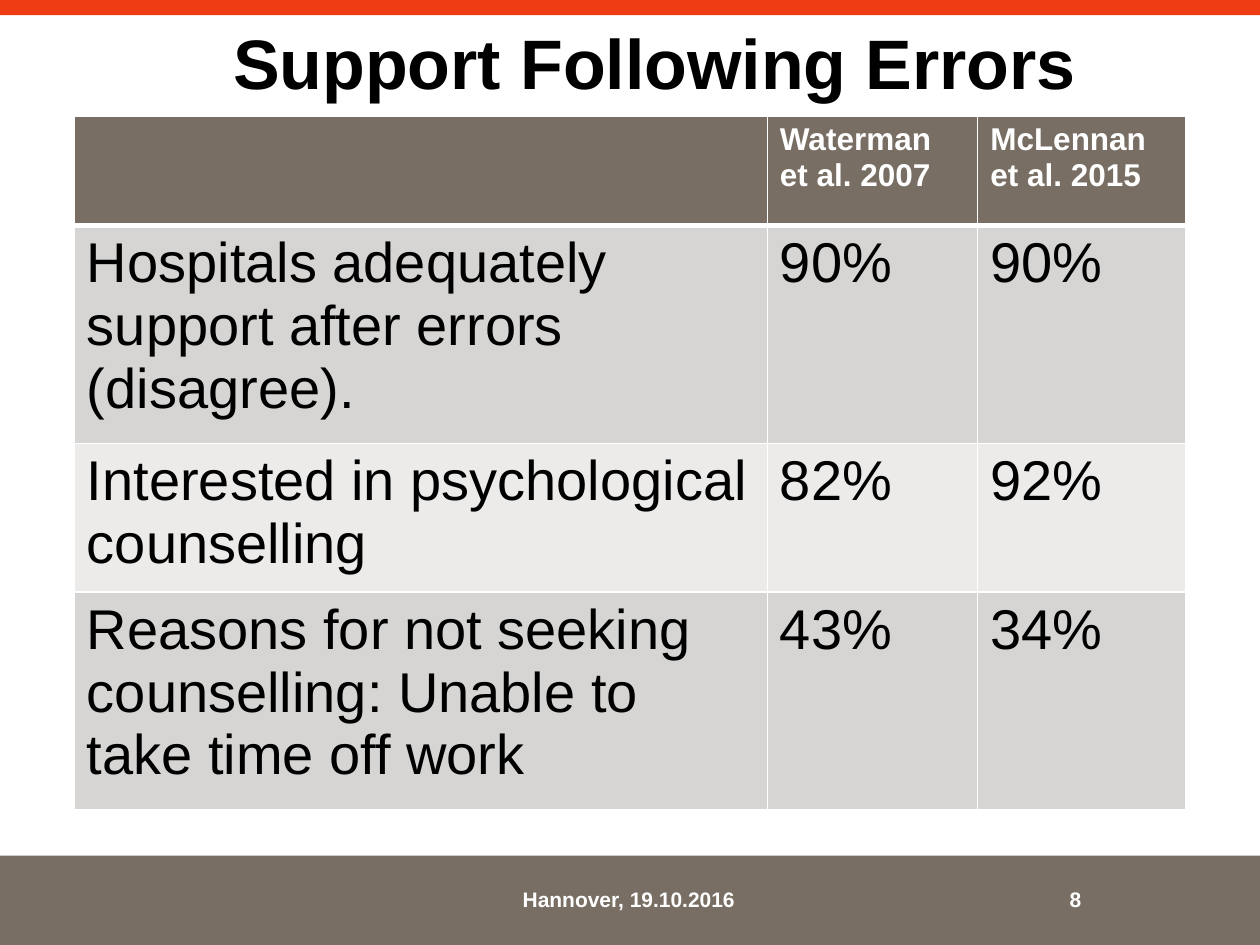
from lxml.etree import SubElement
from pptx import Presentation
from pptx.dml.color import RGBColor
from pptx.enum.shapes import MSO_SHAPE
from pptx.enum.text import MSO_ANCHOR, MSO_AUTO_SIZE, PP_ALIGN
from pptx.oxml.ns import qn
from pptx.util import Inches, Pt

WHITE = RGBColor(0xFF, 0xFF, 0xFF)
BLACK = RGBColor(0, 0, 0)
BROWN = RGBColor(0x78, 0x6E, 0x64)
RED = RGBColor(0xF0, 0x3C, 0x14)
BAND_DARK = RGBColor(0xD6, 0xD5, 0xD3)
BAND_LIGHT = RGBColor(0xEC, 0xEB, 0xEA)

WIDTH, HEIGHT = 10, 7.5
TITLE = "Support Following Errors"
ROWS = [
    ("", "Waterman et al. 2007", "McLennan et al. 2015"),
    ("Hospitals adequately support after errors (disagree).", "90%", "90%"),
    ("Interested in psychological counselling", "82%", "92%"),
    ("Reasons for not seeking counselling: Unable to take time off work", "43%", "34%"),
]
COLUMN_WIDTHS = [5.5, 1.67, 1.65]
ROW_HEIGHTS = [0.87, 1.73, 1.18, 1.73]
BARS = [(HEIGHT - 0.71, 0.71, BROWN), (0, 0.12, RED)]
FOOTERS = [("8", 8.39, 0.54), ("Hannover, 19.10.2016", 4.05, 1.9)]


def style(paragraph, size, color, bold):
    paragraph.alignment = PP_ALIGN.LEFT
    font = paragraph.font
    font.name, font.size, font.bold = "Arial", Pt(size), bold
    font.color.rgb = color


def add_borders(cell, top, bottom):
    properties = cell._tc.get_or_add_tcPr()
    for side, points in zip("LRTB", (1, 1, top, bottom)):
        line = SubElement(properties, qn(f"a:ln{side}"), w=str(Pt(points)))
        fill = SubElement(line, qn("a:solidFill"))
        SubElement(fill, qn("a:srgbClr"), val=str(WHITE))


def add_bars(slide):
    for top, height, color in BARS:
        bar = slide.shapes.add_shape(
            MSO_SHAPE.RECTANGLE, 0, Inches(top), Inches(WIDTH), Inches(height))
        bar.shadow.inherit = False
        bar.fill.solid()
        bar.fill.fore_color.rgb = color
        bar.line.fill.background()


def add_footers(slide):
    for text, left, width in FOOTERS:
        box = slide.shapes.add_textbox(
            Inches(left), Inches(6.99), Inches(width), Inches(0.3))
        frame = box.text_frame
        frame.word_wrap = False
        frame.auto_size = MSO_AUTO_SIZE.SHAPE_TO_FIT_TEXT
        frame.text = text
        style(frame.paragraphs[0], 12, WHITE, True)


def format_title(slide):
    title = slide.shapes.title
    title.left, title.top = Inches(1.77), Inches(0.13)
    title.width, title.height = Inches(7.01), Inches(0.71)
    frame = title.text_frame
    frame.text = TITLE
    frame.vertical_anchor = MSO_ANCHOR.MIDDLE
    frame.margin_left = frame.margin_right = Inches(0.08)
    frame.margin_top = frame.margin_bottom = Inches(0.04)
    style(frame.paragraphs[0], 40, BLACK, True)


def add_results(slide):
    width = sum(COLUMN_WIDTHS)
    table = slide.shapes.add_table(
        len(ROWS), len(COLUMN_WIDTHS), Inches((WIDTH - width) / 2), Inches(0.92),
        Inches(width), Inches(sum(ROW_HEIGHTS))).table
    for column, size in zip(table.columns, COLUMN_WIDTHS):
        column.width = Inches(size)
    for index, (row, height, texts) in enumerate(zip(table.rows, ROW_HEIGHTS, ROWS)):
        row.height = Inches(height)
        header = index == 0
        band = BROWN if header else BAND_DARK if index % 2 else BAND_LIGHT
        for cell, text in zip(row.cells, texts):
            add_borders(cell, 3 if index == 1 else 1, 3 if header else 1)
            cell.fill.solid()
            cell.fill.fore_color.rgb = band
            cell.text = text
            style(cell.text_frame.paragraphs[0], 18 if header else 32,
                  WHITE if header else BLACK, header)


def main():
    deck = Presentation()
    deck.slide_width, deck.slide_height = Inches(WIDTH), Inches(HEIGHT)
    slide = deck.slides.add_slide(deck.slide_layouts[5])
    add_bars(slide)
    add_footers(slide)
    format_title(slide)
    add_results(slide)
    deck.save("out.pptx")


if __name__ == "__main__":
    main()
